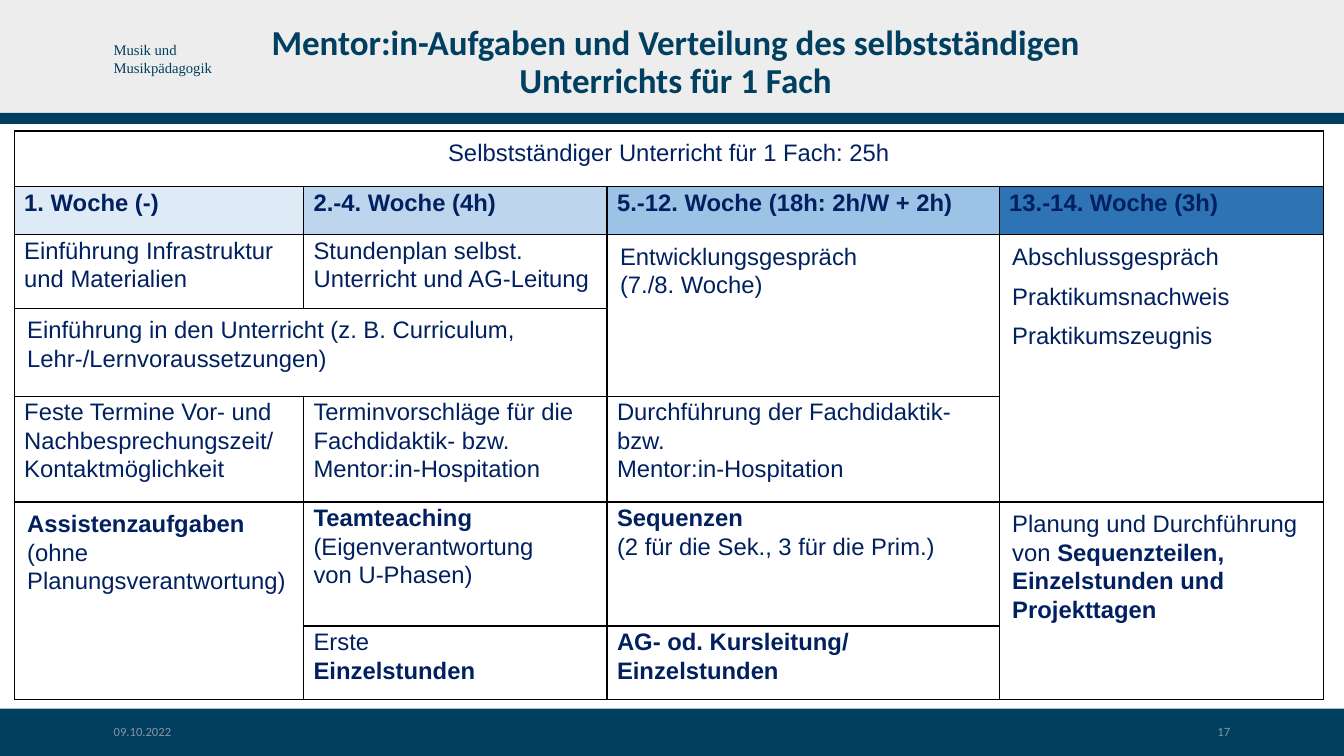
from lxml import etree
from pptx import Presentation
from pptx.dml.color import RGBColor
from pptx.enum.shapes import MSO_SHAPE
from pptx.enum.text import MSO_ANCHOR, PP_ALIGN
from pptx.oxml.ns import qn
from pptx.util import Inches, Pt

RECTANGLE = MSO_SHAPE.RECTANGLE
TOP, MIDDLE = MSO_ANCHOR.TOP, MSO_ANCHOR.MIDDLE
LEFT, CENTER, RIGHT = PP_ALIGN.LEFT, PP_ALIGN.CENTER, PP_ALIGN.RIGHT

PETROL = RGBColor(0x00, 0x3F, 0x60)
PALE_GREY = RGBColor(0xED, 0xED, 0xED)
FOOTER_GREY = RGBColor(0x8C, 0x93, 0x9D)
NAVY = RGBColor(0x00, 0x20, 0x60)
WHITE = RGBColor(0xFF, 0xFF, 0xFF)
BLACK = RGBColor(0x00, 0x00, 0x00)
WEEK_BLUES = [
    RGBColor(0xDE, 0xEA, 0xF6),
    RGBColor(0xBD, 0xD6, 0xEE),
    RGBColor(0x9C, 0xC2, 0xE5),
    RGBColor(0x2E, 0x74, 0xB5),
]

SLIDE_WIDTH, SLIDE_HEIGHT = 13.33, 7.5
COLUMN_WIDTHS = [2.87, 3.01, 3.89, 3.22]
ROW_HEIGHTS = [0.55, 0.48, 0.73, 0.87, 1.05, 1.23, 0.73]
WEEK_ROW = 1

# (row, column, row span, column span): paragraphs, with ** around bold text
PLAN = {
    (0, 0, 1, 4): ["Selbstständiger Unterricht für 1 Fach: 25h"],
    (1, 0, 1, 1): ["**1. Woche (-)**"],
    (1, 1, 1, 1): ["**2.-4. Woche (4h)**"],
    (1, 2, 1, 1): ["**5.-12. Woche (18h: 2h/W + 2h)**"],
    (1, 3, 1, 1): ["**13.-14. Woche (3h)**"],
    (2, 0, 1, 1): ["Einführung Infrastruktur\nund Materialien"],
    (2, 1, 1, 1): ["Stundenplan selbst. Unterricht und AG-Leitung"],
    (2, 2, 2, 1): ["Entwicklungsgespräch\n(7./8. Woche)"],
    (2, 3, 3, 1): ["Abschlussgespräch", "Praktikumsnachweis", "Praktikumszeugnis"],
    (3, 0, 1, 2): ["Einführung in den Unterricht (z. B. Curriculum,\nLehr-/Lernvoraussetzungen)"],
    (4, 0, 1, 1): ["Feste Termine Vor- und Nachbesprechungszeit/ Kontaktmöglichkeit"],
    (4, 1, 1, 1): ["Terminvorschläge für die Fachdidaktik- bzw. Mentor:in-Hospitation"],
    (4, 2, 1, 1): ["Durchführung der Fachdidaktik- bzw.\nMentor:in-Hospitation"],
    (5, 0, 2, 1): ["**Assistenzaufgaben** (ohne Planungsverantwortung)"],
    (5, 1, 1, 1): ["**Teamteaching** (Eigenverantwortung\nvon U-Phasen)"],
    (5, 2, 1, 1): ["**Sequenzen**\n(2 für die Sek., 3 für die Prim.)"],
    (5, 3, 2, 1): ["Planung und Durchführung von **Sequenzteilen, Einzelstunden und Projekttagen**"],
    (6, 1, 1, 1): ["Erste\n**Einzelstunden**"],
    (6, 2, 1, 1): ["**AG- od. Kursleitung/ Einzelstunden**"],
}


def set_font(paragraph, name, size, color):
    paragraph.font.name = name
    paragraph.font.size = Pt(size)
    paragraph.font.color.rgb = color


def add_band(slide, top, height, color):
    band = slide.shapes.add_shape(
        RECTANGLE, 0, Inches(top), Inches(SLIDE_WIDTH), Inches(height))
    band.shadow.inherit = False
    band.fill.solid()
    band.fill.fore_color.rgb = color
    band.line.fill.background()


def add_label(slide, box, lines, name, size, color, align=LEFT, anchor=MIDDLE,
              spacing=0.9, bold=False):
    frame = slide.shapes.add_textbox(*map(Inches, box)).text_frame
    frame.word_wrap = True
    frame.vertical_anchor = anchor
    frame.text = "\n".join(lines)
    for paragraph in frame.paragraphs:
        paragraph.alignment = align
        paragraph.line_spacing = spacing
        set_font(paragraph, name, size, color)
        paragraph.font.bold = bold


def add_header(slide, top, height):
    add_band(slide, top, height, PALE_GREY)
    add_label(slide, (1.03, top + 0.36, 2.03, 0.45), ["Musik und", "Musikpädagogik"],
              "Times New Roman", 10.5, PETROL, anchor=TOP, spacing=1.0)
    add_band(slide, top + height - 0.01, 0.11, PETROL)
    add_label(slide, (2.2, top + 0.19, 9, 0.87),
              ["Mentor:in-Aufgaben und Verteilung des selbstständigen Unterrichts für 1 Fach"],
              "Calibri", 25, PETROL, align=CENTER, bold=True)


def add_footer(slide, top, height):
    add_band(slide, top, height, PETROL)
    for left, entry, align in ((1.03, "09.10.2022", LEFT), (9.3, "17", RIGHT)):
        add_label(slide, (left, top + 0.12, 3, 0.24), [entry],
                  "Calibri", 9, FOOTER_GREY, align=align)


def add_borders(cell):
    properties = cell._tc.get_or_add_tcPr()
    for side in ("a:lnL", "a:lnR", "a:lnT", "a:lnB"):
        border = etree.SubElement(properties, qn(side), w=str(Pt(1)))
        fill = etree.SubElement(border, qn("a:solidFill"))
        etree.SubElement(fill, qn("a:srgbClr"), val=str(BLACK))


def write_marked(paragraph, marked):
    for part_index, part in enumerate(marked.split("**")):
        for line_index, line in enumerate(part.split("\n")):
            if line_index:
                paragraph.add_line_break()
            if line:
                run = paragraph.add_run()
                run.text = line
                if part_index % 2:
                    run.font.bold = True


def fill_cell(cell, entries, merged, align):
    side, top, bottom = (0.13, 0.07, 0.07) if merged else (0.1, 0.01, 0)
    cell.margin_left = cell.margin_right = Inches(side)
    cell.margin_top, cell.margin_bottom = Inches(top), Inches(bottom)
    frame = cell.text_frame
    for index, entry in enumerate(entries):
        paragraph = frame.add_paragraph() if index else frame.paragraphs[0]
        paragraph.alignment = align
        paragraph.line_spacing = 1.07
        paragraph.space_after = Pt(8)
        set_font(paragraph, "Arial", 17, NAVY)
        write_marked(paragraph, entry)


def add_plan(slide, left, top):
    plan = slide.shapes.add_table(
        len(ROW_HEIGHTS), len(COLUMN_WIDTHS), Inches(left), Inches(top),
        Inches(sum(COLUMN_WIDTHS)), Inches(sum(ROW_HEIGHTS))).table
    plan.first_row = plan.horz_banding = False
    for column, width in zip(plan.columns, COLUMN_WIDTHS):
        column.width = Inches(width)
    for row_index, (row, height) in enumerate(zip(plan.rows, ROW_HEIGHTS)):
        row.height = Inches(height)
        for cell, week_blue in zip(row.cells, WEEK_BLUES):
            add_borders(cell)
            cell.fill.solid()
            cell.fill.fore_color.rgb = week_blue if row_index == WEEK_ROW else WHITE
    for (row, column, row_span, column_span), entries in PLAN.items():
        cell = plan.cell(row, column)
        merged = row_span * column_span > 1
        if merged:
            cell.merge(plan.cell(row + row_span - 1, column + column_span - 1))
        fill_cell(cell, entries, merged, CENTER if row == 0 else LEFT)


def main():
    presentation = Presentation()
    presentation.slide_width = Inches(SLIDE_WIDTH)
    presentation.slide_height = Inches(SLIDE_HEIGHT)
    slide = presentation.slides.add_slide(presentation.slide_layouts[6])
    add_header(slide, 0, 1.13)
    add_footer(slide, 7.03, 0.47)
    add_plan(slide, 0.14, 1.3)
    presentation.save("out.pptx")


if __name__ == "__main__":
    main()
